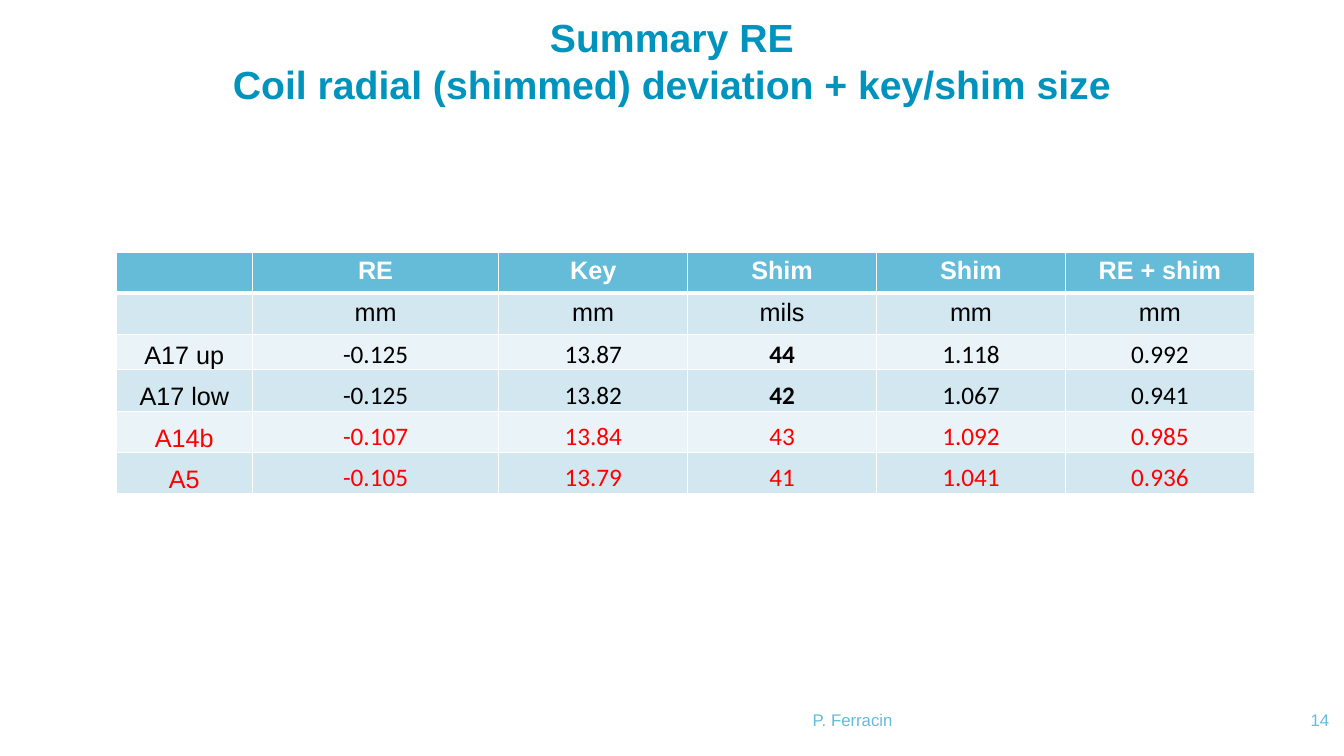
from dataclasses import dataclass

from lxml.etree import SubElement
from pptx import Presentation
from pptx.dml.color import RGBColor
from pptx.enum.text import MSO_ANCHOR, MSO_AUTO_SIZE, PP_ALIGN
from pptx.oxml.ns import qn
from pptx.slide import Slide
from pptx.table import _Cell
from pptx.text.text import TextFrame
from pptx.util import Cm, Pt

TITLE_BLUE = RGBColor(0x00, 0x93, 0xBE)
HEADER_BLUE = RGBColor(0x64, 0xBC, 0xD9)
DARK_BAND = RGBColor(0xD3, 0xE7, 0xF1)
LIGHT_BAND = RGBColor(0xEA, 0xF3, 0xF8)
WHITE = RGBColor(0xFF, 0xFF, 0xFF)
BLACK = RGBColor(0x00, 0x00, 0x00)
RED = RGBColor(0xFF, 0x00, 0x00)

HEADINGS = ["", "RE", "Key", "Shim", "Shim", "RE + shim"]
UNITS = ["", "mm", "mm", "mils", "mm", "mm"]
COLUMN_WIDTHS = [3.43, 6.21] + [4.76] * 4
ROW_HEIGHTS = [1.04, 1.04, 0.89, 1.04, 1.04, 1.04]
SHIM_MILS_COLUMN = 3


@dataclass
class TextStyle:
    size: int
    color: RGBColor
    bold: bool = False
    font: str = "Arial"
    align: PP_ALIGN = PP_ALIGN.CENTER


@dataclass
class FooterItem:
    text: str
    left: float
    width: float
    align: PP_ALIGN


@dataclass
class Magnet:
    name: str
    values: list[str]
    color: RGBColor = BLACK
    bold_shim: bool = False


FOOTER_ITEMS = [
    FooterItem("P. Ferracin", 11.38, 20.22, PP_ALIGN.CENTER),
    FooterItem("14", 32.18, 1.32, PP_ALIGN.RIGHT),
]
MAGNETS = [
    Magnet("A17 up", ["-0.125", "13.87", "44", "1.118", "0.992"], bold_shim=True),
    Magnet("A17 low", ["-0.125", "13.82", "42", "1.067", "0.941"], bold_shim=True),
    Magnet("A14b", ["-0.107", "13.84", "43", "1.092", "0.985"], RED),
    Magnet("A5", ["-0.105", "13.79", "41", "1.041", "0.936"], RED),
]


def write_text(text_frame: TextFrame, text: str, style: TextStyle) -> None:
    text_frame.text = text
    for paragraph in text_frame.paragraphs:
        paragraph.alignment = style.align
        paragraph.font.size = Pt(style.size)
        for run in paragraph.runs:
            run.font.name = style.font
            run.font.size = Pt(style.size)
            run.font.bold = style.bold
            run.font.color.rgb = style.color


def prepare_frame(text_frame: TextFrame, anchor: MSO_ANCHOR) -> None:
    text_frame.word_wrap = True
    text_frame.auto_size = MSO_AUTO_SIZE.NONE
    text_frame.vertical_anchor = anchor
    text_frame.margin_left = text_frame.margin_right = 0
    text_frame.margin_top = text_frame.margin_bottom = 0


def add_title(slide: Slide) -> None:
    title = slide.shapes.title
    title.left, title.top, title.width, title.height = Cm(2.26), Cm(0.51), Cm(29.34), Cm(2.01)
    prepare_frame(title.text_frame, MSO_ANCHOR.MIDDLE)
    write_text(title.text_frame, "Summary RE\vCoil radial (shimmed) deviation + key/shim size",
               TextStyle(28, TITLE_BLUE, bold=True))


def add_footer(slide: Slide, item: FooterItem) -> None:
    box = slide.shapes.add_textbox(Cm(item.left), Cm(17.4), Cm(item.width), Cm(0.99))
    prepare_frame(box.text_frame, MSO_ANCHOR.BOTTOM)
    write_text(box.text_frame, item.text, TextStyle(12, HEADER_BLUE, align=item.align))


def format_cell(cell: _Cell, fill: RGBColor, top: float, bottom: float) -> None:
    properties = cell._tc.get_or_add_tcPr()
    for side, width in (("L", 1), ("R", 1), ("T", top), ("B", bottom)):
        border = SubElement(properties, qn(f"a:ln{side}"), w=str(Pt(width)))
        SubElement(SubElement(border, qn("a:solidFill")), qn("a:srgbClr"), val=str(WHITE))
    cell.fill.solid()
    cell.fill.fore_color.rgb = fill


def fill_row(cells: list[_Cell], texts: list[str], styles: list[TextStyle],
             fill: RGBColor, top: float = 1, bottom: float = 1) -> None:
    for cell, text, style in zip(cells, texts, styles):
        write_text(cell.text_frame, text, style)
        format_cell(cell, fill, top, bottom)


def add_shim_table(slide: Slide) -> None:
    table = slide.shapes.add_table(len(ROW_HEIGHTS), len(COLUMN_WIDTHS), Cm(2.93), Cm(6.35),
                                   Cm(sum(COLUMN_WIDTHS)), Cm(sum(ROW_HEIGHTS))).table
    for column, width in zip(table.columns, COLUMN_WIDTHS):
        column.width = Cm(width)
    for row, height in zip(table.rows, ROW_HEIGHTS):
        row.height = Cm(height)
    rows = [list(row.cells) for row in table.rows]

    # Heading and unit rows
    fill_row(rows[0], HEADINGS, [TextStyle(18, WHITE, bold=True)] * len(HEADINGS),
             HEADER_BLUE, bottom=3)
    fill_row(rows[1], UNITS, [TextStyle(18, BLACK)] * len(UNITS), DARK_BAND, top=3)

    # One row per magnet, in alternating bands
    for index, (cells, magnet) in enumerate(zip(rows[2:], MAGNETS)):
        styles = [TextStyle(18, magnet.color, font="Calibri") for _ in cells]
        styles[0].font = "Arial"
        styles[SHIM_MILS_COLUMN].bold = magnet.bold_shim
        for cell in cells:
            cell.vertical_anchor = MSO_ANCHOR.BOTTOM
            cell.margin_left = cell.margin_right = cell.margin_top = Cm(0.03)
            cell.margin_bottom = 0
        fill_row(cells, [magnet.name, *magnet.values], styles,
                 DARK_BAND if index % 2 else LIGHT_BAND)


def main() -> None:
    presentation = Presentation()
    presentation.slide_width, presentation.slide_height = Cm(33.87), Cm(19.05)
    slide = presentation.slides.add_slide(presentation.slide_layouts[5])
    add_title(slide)
    for item in FOOTER_ITEMS:
        add_footer(slide, item)
    add_shim_table(slide)
    presentation.save("out.pptx")


if __name__ == "__main__":
    main()
